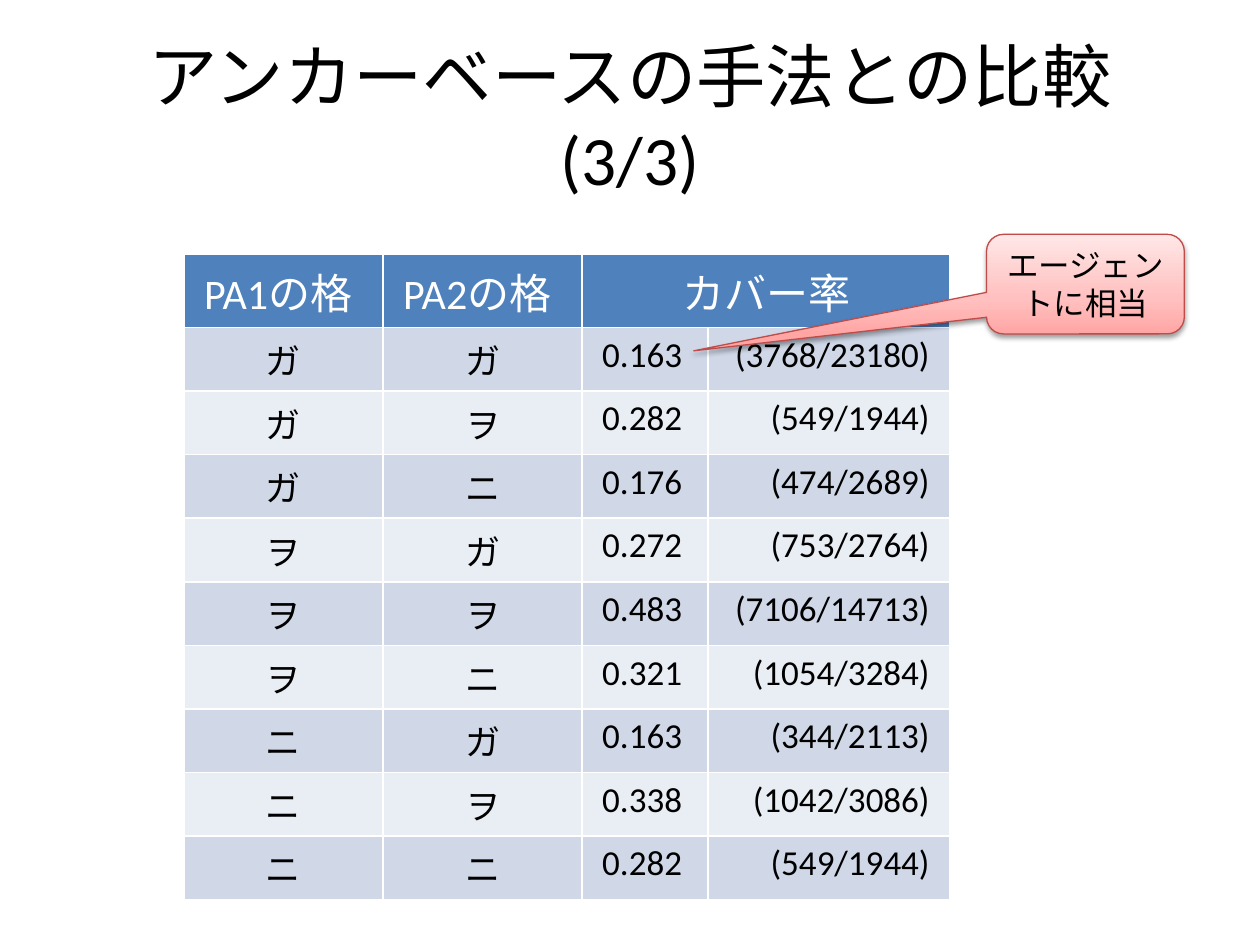
import copy
from dataclasses import dataclass

import pptx
import pptx.dml.color
import pptx.enum.shapes
import pptx.enum.text
import pptx.oxml.ns
import pptx.util
from lxml import etree

Inches = pptx.util.Inches
Pt = pptx.util.Pt
RGB = pptx.dml.color.RGBColor.from_string
ALIGN = pptx.enum.text.PP_ALIGN
MIDDLE = pptx.enum.text.MSO_ANCHOR.MIDDLE
qn = pptx.oxml.ns.qn


@dataclass(frozen=True)
class Theme:
    font: str = "Calibri"
    ink: str = "000000"
    white: str = "FFFFFF"
    header: str = "4F81BD"
    bands: tuple = ("D0D8E8", "E9EDF4")
    callout_line: str = "BF4C48"
    callout_stops: tuple = ((0, "FFA6A5"), (0.35, "FFC0BF"), (1, "FFE7E7"))
    title_size: float = 39.6
    header_size: float = 24
    body_size: float = 20
    callout_size: float = 18


THEME = Theme()
HEADER = ("PA1の格", "PA2の格", "カバー率")
HEADER_ALIGN = (ALIGN.LEFT, ALIGN.LEFT, ALIGN.CENTER)
BODY_ALIGN = (ALIGN.CENTER, ALIGN.CENTER, ALIGN.LEFT, ALIGN.RIGHT)
COVERAGE = (
    ("ガ", "ガ", "0.163", "(3768/23180)"),
    ("ガ", "ヲ", "0.282", "(549/1944)"),
    ("ガ", "ニ", "0.176", "(474/2689)"),
    ("ヲ", "ガ", "0.272", "(753/2764)"),
    ("ヲ", "ヲ", "0.483", "(7106/14713)"),
    ("ヲ", "ニ", "0.321", "(1054/3284)"),
    ("ニ", "ガ", "0.163", "(344/2113)"),
    ("ニ", "ヲ", "0.338", "(1042/3086)"),
    ("ニ", "ニ", "0.282", "(549/1944)"),
)


def write_text(tf, text, *, size, color=THEME.ink, align=ALIGN.CENTER):
    tf.word_wrap = True
    p = tf.paragraphs[0]
    p.alignment = align
    r = p.add_run()
    r.text = text
    r.font.name = THEME.font
    r.font.size = Pt(size)
    r.font.color.rgb = RGB(color)


def add_color(parent, color):
    return etree.SubElement(parent, qn("a:srgbClr"), val=color)


def style_cell(cell, fill):
    cell.margin_left = cell.margin_right = Inches(0.16)
    cell.margin_top = cell.margin_bottom = Inches(0.05)
    tcPr = cell._tc.get_or_add_tcPr()
    for side in "LRTB":
        ln = etree.SubElement(tcPr, qn(f"a:ln{side}"), w=str(Pt(1)))
        add_color(etree.SubElement(ln, qn("a:solidFill")), THEME.white)
    cell.fill.solid()
    cell.fill.fore_color.rgb = RGB(fill)


def add_title(s, x, y, w, h):
    tf = s.shapes.add_textbox(x, y, w, h).text_frame
    tf.vertical_anchor = MIDDLE
    write_text(tf, "アンカーベースの手法との比較 (3/3)", size=THEME.title_size)


def add_coverage_table(s, x, y, w, h):
    widths = (1.58, 1.58, 1.0, 1.92)
    table = s.shapes.add_table(len(COVERAGE) + 1, len(widths), x, y, w, h).table
    for column, width in zip(table.columns, widths):
        column.width = Inches(width)
    header_height = Inches(0.58)
    body_height = (h - header_height) // len(COVERAGE)
    for i, row in enumerate(table.rows):
        row.height = body_height if i else header_height
    table.cell(0, 2).merge(table.cell(0, 3))
    for col in range(len(widths)):
        style_cell(table.cell(0, col), THEME.header)
    for col, (text, align) in enumerate(zip(HEADER, HEADER_ALIGN)):
        write_text(table.cell(0, col).text_frame, text,
                   size=THEME.header_size, color=THEME.white, align=align)
    for row, values in enumerate(COVERAGE, 1):
        for col, (text, align) in enumerate(zip(values, BODY_ALIGN)):
            cell = table.cell(row, col)
            style_cell(cell, THEME.bands[(row - 1) % 2])
            write_text(cell.text_frame, text, size=THEME.body_size, align=align)


def fill_gradient(sp, stops, angle):
    sp.fill.gradient()
    sp.fill.gradient_angle = angle
    stop_list = sp._element.spPr.find(".//" + qn("a:gsLst"))
    while len(stop_list) < len(stops):
        stop_list.append(copy.deepcopy(stop_list[-1]))
    for stop, (position, color) in zip(sp.fill.gradient_stops, stops):
        stop.position = position
        stop.color.rgb = RGB(color)


def add_shadow(sp):
    sp.shadow.inherit = False
    effects = sp._element.spPr.find(qn("a:effectLst"))
    shadow = etree.SubElement(
        effects, qn("a:outerShdw"), blurRad=str(Pt(3.1)), dist=str(Pt(1.6)),
        dir=str(90 * 60000), rotWithShape="0")
    etree.SubElement(add_color(shadow, THEME.ink), qn("a:alpha"), val="38000")


def add_callout(s, x, y, w, h):
    kind = pptx.enum.shapes.MSO_SHAPE.ROUNDED_RECTANGULAR_CALLOUT
    sp = s.shapes.add_shape(kind, x, y, w, h)
    for i, value in enumerate((-1.98, 0.67, 0.17)):
        sp.adjustments[i] = value
    fill_gradient(sp, THEME.callout_stops, 90)
    sp.line.color.rgb = RGB(THEME.callout_line)
    sp.line.width = Pt(0.75)
    add_shadow(sp)
    sp.text_frame.vertical_anchor = MIDDLE
    write_text(sp.text_frame, "エージェントに相当", size=THEME.callout_size)


def main():
    prs = pptx.Presentation()
    prs.slide_width = Inches(10)
    prs.slide_height = Inches(7.5)
    s = prs.slides.add_slide(prs.slide_layouts[6])
    add_title(s, Inches(0.5), Inches(0.3), Inches(9), Inches(1.25))
    add_coverage_table(s, Inches(1.46), Inches(2.02), Inches(6.08), Inches(5.12))
    add_callout(s, Inches(7.83), Inches(1.86), Inches(1.57), Inches(0.79))
    prs.save("out.pptx")


if __name__ == "__main__":
    main()
